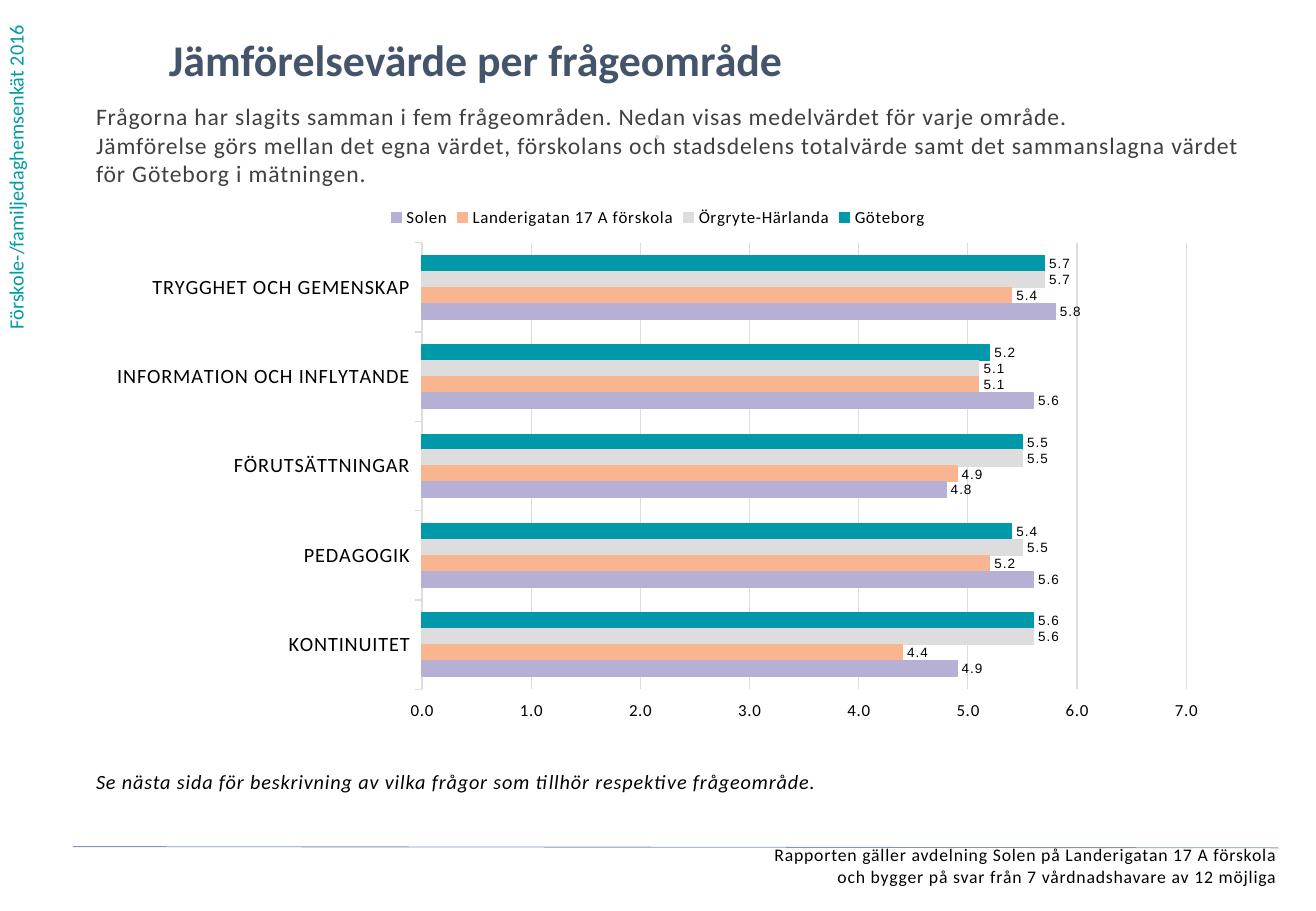
from dataclasses import dataclass

from pptx import Presentation
from pptx import util as u
from pptx.chart import data as chart_data
from pptx.dml.color import RGBColor
from pptx.enum import chart as ch
from pptx.enum import shapes, text
from pptx.oxml import parse_xml
from pptx.oxml.ns import nsdecls, qn
from pptx.slide import Slide

COLUMN = ROW = u.Inches(0.1)
SLIDE_COLUMNS, SLIDE_ROWS = 108.3, 75
LEFT_MARGIN = 7.9
FONT = "Calibri"
LABEL_FONT = "Arial"
SPACING = "50"

BLACK = RGBColor(0x00, 0x00, 0x00)
BODY_GREY = RGBColor(0x40, 0x40, 0x40)
TITLE_BLUE = RGBColor(0x44, 0x54, 0x6A)
SIDE_TEAL = RGBColor(0x00, 0x9B, 0xA4)
DOT_BLUE = RGBColor(0xD2, 0xD9, 0xE2)
RULE_BLUE = RGBColor(0x84, 0x97, 0xB0)
GRID_GREY = RGBColor(0xDD, 0xDD, 0xDD)
TEAL = RGBColor(0x00, 0x99, 0xAA)
PEACH = RGBColor(0xF9, 0xB5, 0x90)
LILAC = RGBColor(0xB6, 0xB1, 0xD4)


@dataclass(frozen=True)
class Passage:
    lines: tuple[str, ...]
    column: float
    row: float
    columns: float
    rows: float
    size: float
    color: RGBColor
    bold: bool = False
    italic: bool = False
    spaced: bool = True
    vertical: bool = False
    align: text.PP_ALIGN = text.PP_ALIGN.LEFT


@dataclass(frozen=True)
class Unit:
    name: str
    means: tuple[float, ...]
    color: RGBColor


PASSAGES = (
    Passage(("Förskole-/familjedaghemsenkät 2016",), -0.2, 0, 4, 28.1, 12, SIDE_TEAL,
            spaced=False, vertical=True),
    Passage(("Jämförelsevärde per frågeområde",), 13.9, 2.7, 83.4, 5.7, 26, TITLE_BLUE,
            bold=True, spaced=False),
    Passage(("Frågorna har slagits samman i fem frågeområden. "
             "Nedan visas medelvärdet för varje område.",
             "Jämförelse görs mellan det egna värdet, förskolans och stadsdelens "
             "totalvärde samt det sammanslagna värdet för Göteborg i mätningen."),
            LEFT_MARGIN, 8.4, 95.5, 10.1, 14, BODY_GREY),
    Passage(("Rapporten gäller avdelning Solen på Landerigatan 17 A förskola",
             "och bygger på svar från 7 vårdnadshavare av 12 möjliga"),
            1.1, 69.5, 104, 4.3, 10.5, BLACK, align=text.PP_ALIGN.RIGHT),
    Passage(("⋅",), 38.7, 10.2, 30.8, 3.9, 12, DOT_BLUE, bold=True,
            align=text.PP_ALIGN.CENTER),
    Passage(("Se nästa sida för beskrivning av vilka frågor som tillhör "
             "respektive frågeområde.",),
            LEFT_MARGIN, 63.3, 92.5, 3, 12, BLACK, italic=True),
)

AREAS = ("TRYGGHET OCH GEMENSKAP", "INFORMATION OCH INFLYTANDE",
         "FÖRUTSÄTTNINGAR", "PEDAGOGIK", "KONTINUITET")
UNITS = (
    Unit("Göteborg", (5.7, 5.2, 5.5, 5.4, 5.6), TEAL),
    Unit("Örgryte-Härlanda", (5.7, 5.1, 5.5, 5.5, 5.6), GRID_GREY),
    Unit("Landerigatan 17 A förskola", (5.4, 5.1, 4.9, 5.2, 4.4), PEACH),
    Unit("Solen", (5.8, 5.6, 4.8, 5.6, 4.9), LILAC),
)


def across(columns: float) -> int:
    return round(columns * COLUMN)


def down(rows: float) -> int:
    return round(rows * ROW)


def add_passage(slide: Slide, passage: Passage) -> None:
    box = slide.shapes.add_textbox(across(passage.column), down(passage.row),
                                   across(passage.columns), down(passage.rows))
    frame = box.text_frame
    frame.word_wrap = True
    if passage.vertical:
        box.element.txBody.bodyPr.set("vert", "vert270")
    else:
        frame.margin_left = frame.margin_right = 0
        frame.margin_top = frame.margin_bottom = 0
    frame.text = "\n".join(passage.lines)
    for paragraph in frame.paragraphs:
        paragraph.alignment = passage.align
        for run in paragraph.runs:
            run.font.name = FONT
            run.font.size = u.Pt(passage.size)
            run.font.bold = passage.bold
            run.font.italic = passage.italic
            run.font.color.rgb = passage.color
            if passage.spaced:
                run.font._element.set("spc", SPACING)


def add_comparison(slide: Slide) -> None:
    means = chart_data.CategoryChartData(number_format="0.0;0.0")
    means.categories = AREAS
    for unit in UNITS:
        means.add_series(unit.name, unit.means)
    chart = slide.shapes.add_chart(
        ch.XL_CHART_TYPE.BAR_CLUSTERED, across(LEFT_MARGIN), down(16),
        across(92.5), down(44.3), means).chart
    chart.has_title = False
    chart.font.name = FONT
    chart.font.size = u.Pt(10)
    chart.font.color.rgb = BLACK

    chart.has_legend = True
    chart.legend.position = ch.XL_LEGEND_POSITION.TOP
    chart.legend.include_in_layout = False
    chart.legend.font.size = u.Pt(10)

    area_axis = chart.category_axis
    area_axis.reverse_order = True
    area_axis.major_tick_mark = ch.XL_TICK_MARK.OUTSIDE
    area_axis.tick_labels.font.size = u.Pt(12)
    area_axis.format.line.color.rgb = GRID_GREY
    area_axis.format.line.width = u.Pt(0.75)

    mean_axis = chart.value_axis
    mean_axis.minimum_scale, mean_axis.maximum_scale = 0, 7
    mean_axis.major_unit = 1
    mean_axis.tick_label_position = ch.XL_TICK_LABEL_POSITION.HIGH
    mean_axis.format.line.fill.background()
    mean_axis.major_gridlines.format.line.color.rgb = GRID_GREY
    mean_axis.major_gridlines.format.line.width = u.Pt(0.75)
    mean_axis.tick_labels.font.size = u.Pt(10)
    mean_axis.tick_labels.number_format = "0.0;0.0"
    mean_axis.tick_labels.number_format_is_linked = False

    plot = chart.plots[0]
    plot.gap_width = 162
    plot.overlap = 0
    plot.vary_by_categories = False
    for unit, bars in zip(UNITS, plot.series):
        bars.format.fill.solid()
        bars.format.fill.fore_color.rgb = unit.color
        bars.format.line.color.rgb = unit.color
        bars.format.line.width = u.Pt(0.75)
        labels = bars.data_labels
        labels.show_value = True
        labels.number_format = "0.0;0.0"
        labels.number_format_is_linked = False
        labels.position = ch.XL_LABEL_POSITION.OUTSIDE_END
        labels.font.name = LABEL_FONT
        labels.font.size = u.Pt(8)
        labels.font.color.rgb = BLACK

    for properties in chart.element.iter(qn("a:defRPr")):
        properties.set("spc", SPACING)
    plot_area = chart.element.find(".//" + qn("c:plotArea"))
    for layout in plot_area.findall(qn("c:layout")):
        plot_area.remove(layout)
    plot_area.insert(0, parse_xml(
        f'<c:layout {nsdecls("c")}><c:manualLayout><c:layoutTarget val="inner"/>'
        '<c:xMode val="edge"/><c:yMode val="edge"/><c:x val="0.29"/>'
        '<c:y val="0.09"/><c:w val="0.68"/><c:h val="0.83"/>'
        '</c:manualLayout></c:layout>'))


def add_footer_rule(slide: Slide) -> None:
    rule = slide.shapes.add_connector(
        shapes.MSO_CONNECTOR.STRAIGHT, across(6), down(69.7), across(105.2), down(69.8))
    rule.line.color.rgb = RULE_BLUE
    rule.line.width = u.Pt(0.5)
    rule.element.spPr.append(parse_xml(f'<a:effectLst {nsdecls("a")}/>'))


def main() -> None:
    deck = Presentation()
    deck.slide_width, deck.slide_height = across(SLIDE_COLUMNS), down(SLIDE_ROWS)
    slide = deck.slides.add_slide(deck.slide_layouts[6])
    for passage in PASSAGES:
        add_passage(slide, passage)
    add_comparison(slide)
    add_footer_rule(slide)
    deck.save("out.pptx")


if __name__ == "__main__":
    main()
